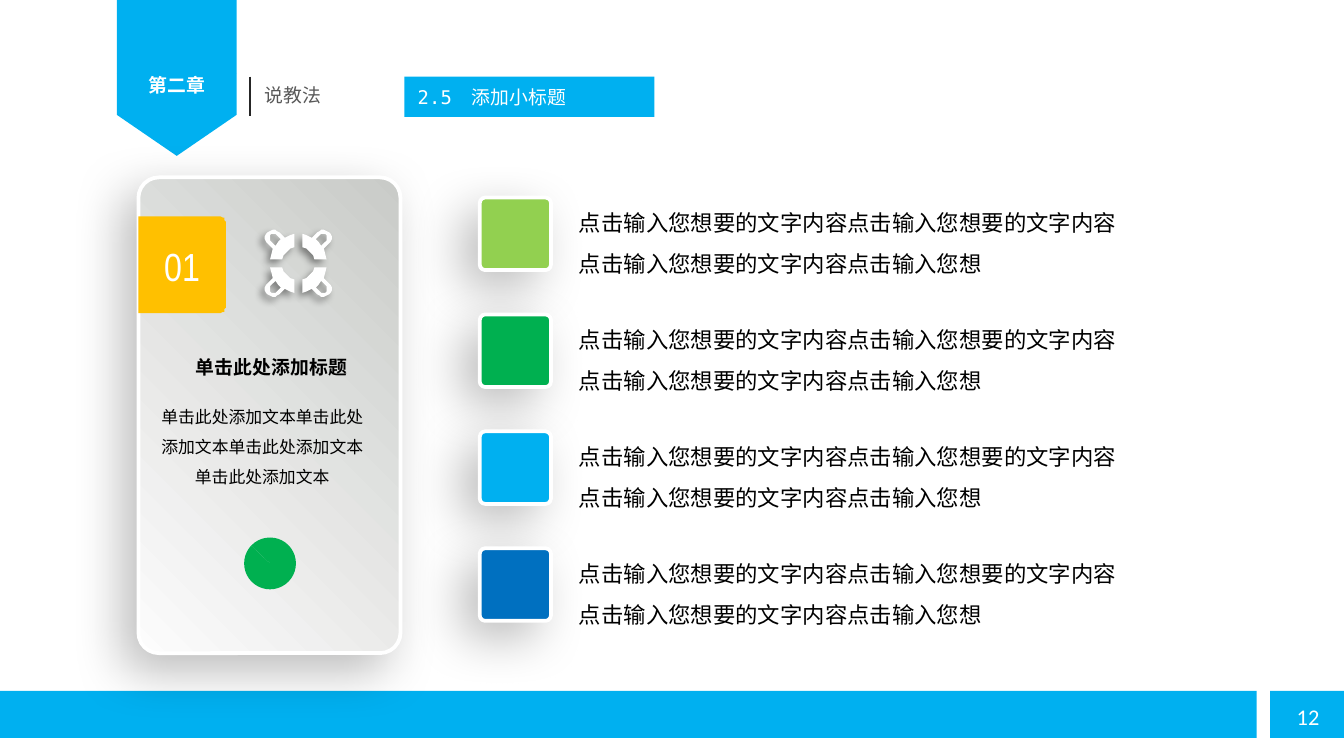
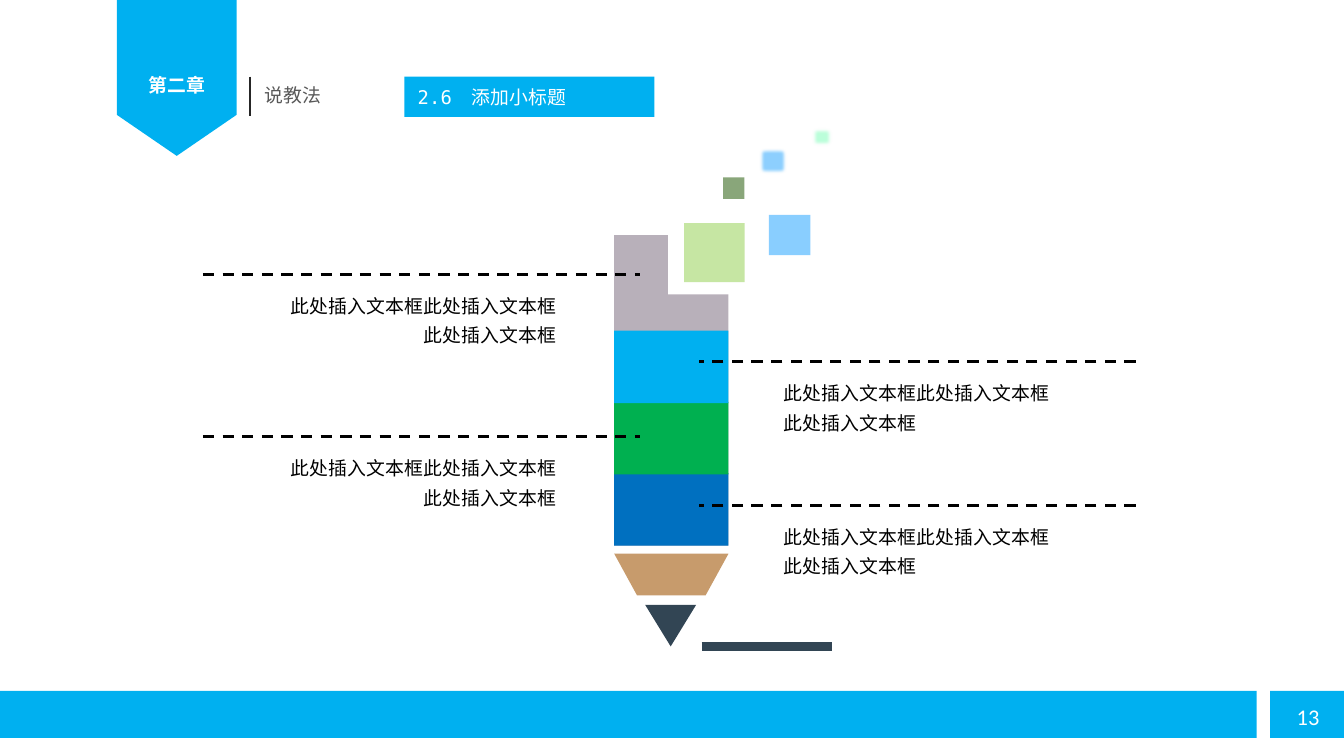
import math
from lxml import etree
from pptx import Presentation
from pptx import util as u
from pptx.chart import data
from pptx.dml import color
from pptx.enum import chart as ch
from pptx.enum import dml, shapes, text
from pptx.oxml import ns

HUES = {
    "sky": "00B0F0", "white": "FFFFFF", "black": "000000", "rule": "262626",
    "gray": "595959", "lime": "92D050", "green": "00B050", "blue": "0070C0",
    "gold": "FFC000", "dark": "C9CBC8", "pale": "FCFCFC", "lead": "324554",
    "wood": "C79B6C", "mauve": "78697B", "moss": "89A67A", "mint": "BCFFDB",
    "ice": "80CAFF",
}
SANS, BODY, MONO, THIN = "Noto Sans CJK SC", "Calibri", "DejaVu Sans Mono", "Arial Narrow"
SMALL = 10.13
SOFT = {"alpha": 26, "blur": 27, "dist": 12}
CRISP = {"alpha": 40, "blur": 4, "dist": 3}
KIND = shapes.MSO_SHAPE
ALIGN = {"l": text.PP_ALIGN.LEFT, "c": text.PP_ALIGN.CENTER, "r": text.PP_ALIGN.RIGHT}
PETAL = [
    [(19, 25), (17, 25), (16, 24), (14, 23), (10, 19), (6, 21), (3, 22), (3, 12),
     (6, 11), (8, 9), (11, 6), (12, 3), (21, 3), (20, 7), (19, 11), (23, 15),
     (24, 16), (25, 18), (25, 20), (24, 22), (23, 23), (21, 24)],
    [(18, 22), (20, 22), (21, 21), (21, 17), (17, 13), (15, 16), (13, 18),
     (16, 21), (17, 22)],
]


def rgb(hue):
    return color.RGBColor.from_string(HUES[hue])


def put(item, vals):
    for name, val in vals.items():
        setattr(item, name, val)


def node(top, tag, **vals):
    return etree.SubElement(top, ns.qn(tag), {k: str(v) for k, v in vals.items()})


def box(at):
    return [u.Inches(n) for n in at]


def paint(shape, hue, alpha=None, edge=None):
    shape.shadow.inherit = False
    shape.fill.solid()
    shape.fill.fore_color.rgb = rgb(hue)
    if alpha:
        fill = shape.element.spPr.find(ns.qn("a:solidFill"))
        node(fill[0], "a:alpha", val=alpha * 1000)
    if edge:
        shape.line.color.rgb = rgb(edge)
        shape.line.width = u.Pt(2)
    else:
        shape.line.fill.background()
    return shape


def block(slide, at, hue, kind=KIND.RECTANGLE, turn=0, **look):
    shape = slide.shapes.add_shape(kind, *box(at))
    shape.rotation = turn
    return paint(shape, hue, **look)


def effect(shape):
    return shape.element.spPr.find(ns.qn("a:effectLst"))


def shade(shape, alpha, blur, dist):
    glow = node(effect(shape), "a:outerShdw", blurRad=u.Pt(blur), dist=u.Pt(dist),
                dir=135 * 60000, algn="ctr", rotWithShape=0)
    node(node(glow, "a:srgbClr", val=HUES["black"]), "a:alpha", val=alpha * 1000)


def blur(shape, size):
    node(effect(shape), "a:softEdge", rad=u.Pt(size))


def tile(slide, at, hue):
    shape = block(slide, at, hue, KIND.ROUNDED_RECTANGLE, edge="white")
    shape.adjustments[0] = 0.078
    shade(shape, **SOFT)
    return shape


def form(slide, rings, hue, **look):
    pen = None
    for ring in rings:
        if pen is None:
            pen = slide.shapes.build_freeform(*ring[0], scale=u.Inches(0.01))
        else:
            pen.move_to(*ring[0])
        pen.add_line_segments(ring[1:], close=True)
    return paint(pen.convert_to_shape(), hue, **look)


def rule(slide, start, end, hue, width, dash=False):
    line = slide.shapes.add_connector(shapes.MSO_CONNECTOR.STRAIGHT, *box(start + end))
    line.line.color.rgb = rgb(hue)
    line.line.width = u.Pt(width)
    if dash:
        line.line.dash_style = dml.MSO_LINE.DASH
    node(line.element.spPr, "a:effectLst")


def write(para, words, size, font, hue, bold=False):
    run = para.add_run()
    run.text = words
    put(run.font, {"size": u.Pt(size), "name": font, "bold": bold})
    run.font.color.rgb = rgb(hue)
    node(run.font._element, "a:ea", typeface=SANS)


def note(slide, at, lines, size=SMALL, font=SANS, hue="black", bold=False,
         align="l", gap=None, wrap=True, pad=None):
    frame = slide.shapes.add_textbox(*box(at)).text_frame
    put(frame, {"word_wrap": wrap, "auto_size": text.MSO_AUTO_SIZE.SHAPE_TO_FIT_TEXT})
    if pad is not None:
        put(frame, {f"margin_{side}": pad for side in ("left", "top", "right", "bottom")})
    for i, words in enumerate(lines):
        para = frame.add_paragraph() if i else frame.paragraphs[0]
        put(para, {"alignment": ALIGN[align], "line_spacing": gap})
        write(para, words, size, font, hue, bold)


def label(slide, part):
    shape = block(slide, (3.01, 0.57, 1.86, 0.3), "sky")
    shape.text_frame.vertical_anchor = text.MSO_ANCHOR.MIDDLE
    para = shape.text_frame.paragraphs[0]
    para.alignment = ALIGN["l"]
    tabs = node(para._p.get_or_add_pPr(), "a:tabLst")
    node(tabs, "a:tab", pos=u.Inches(0.4), algn="l")
    write(para, part + "\t", SMALL, MONO, "white")
    write(para, "添加小标题", SMALL, BODY, "white")


def base(deck, page, part):
    slide = deck.slides.add_slide(deck.slide_layouts[6])
    block(slide, (1.01, 0.41, 0.61, 0.89), "sky", KIND.PENTAGON, 90)
    block(slide, (0.87, 0, 0.89, 0.55), "sky")
    rule(slide, (1.86, 0.57), (1.86, 0.86), "rule", 0.75)
    block(slide, (0, 5.14, 9.35, 0.35), "sky")
    block(slide, (9.45, 5.14, 0.55, 0.35), "sky")
    note(slide, (9.55, 5.18, 0.4, 0.3), [page], 12, BODY, "white", wrap=False)
    note(slide, (0.87, 0.46, 0.89, 0.26), ["第二章"], font=BODY, hue="white",
         bold=True, align="c", gap=1.5, pad=0)
    note(slide, (1.87, 0.57, 2.01, 0.27), ["说教法"], hue="gray")
    label(slide, part)
    return slide


def tab(slide):
    left, top, right, low, bend = 103, 161, 168, 233, 5
    arcs = [(right - bend + bend * math.sin(math.radians(a)),
             y - bend * math.cos(math.radians(a)))
            for y, first in ((top + bend, 0), (low - bend, 90))
            for a in range(first, first + 91, 15)]
    form(slide, [[(left, top), *arcs, (left, low)]], "gold")


def icon(slide):
    rings = [[(222 + sx * x, 196 + sy * y) for x, y in ring]
             for sx in (-1, 1) for sy in (-1, 1) for ring in PETAL]
    shade(form(slide, rings, "white"), **CRISP)


def pie(slide):
    info = data.CategoryChartData()
    info.categories = ["1", "2"]
    info.add_series("Series 1", (87, 13))
    chart = slide.shapes.add_chart(ch.XL_CHART_TYPE.PIE,
                                   *box((1.51, 3.86, 0.99, 0.66)), info).chart
    put(chart, {"has_legend": False, "has_title": False})
    put(chart.font, {"size": u.Pt(18), "name": BODY})
    chart.font.color.rgb = rgb("black")
    plot = chart.plots[0]
    plot.vary_by_categories = False
    for i in range(2):
        look = plot.series[0].points[i].format
        look.fill.solid()
        look.fill.fore_color.rgb = rgb("green")
        look.line.fill.background()
    area = chart._chartSpace.chart.plotArea
    for old in area.findall(ns.qn("c:layout")):
        area.remove(old)
    frame = etree.Element(ns.qn("c:layout"))
    area.insert(0, frame)
    hand = node(frame, "c:manualLayout")
    for tag, val in (("layoutTarget", "inner"), ("xMode", "edge"), ("yMode", "edge"),
                     ("x", 0.31), ("y", 0.21), ("w", 0.39), ("h", 0.59)):
        node(hand, "c:" + tag, val=val)


def card(slide):
    shape = tile(slide, (1.03, 1.32, 1.95, 3.54), "pale")
    shape.fill.gradient()
    shape.fill.gradient_angle = 225
    for stop, hue, spot in zip(shape.fill.gradient_stops, ("dark", "pale"), (0, 1)):
        stop.color.rgb = rgb(hue)
        stop.position = spot
    tab(slide)
    note(slide, (1.11, 1.75, 0.49, 0.45), ["01"], 21, THIN, "white", align="c")
    note(slide, (1.07, 2.6, 1.91, 0.27), ["单击此处添加标题"], bold=True, align="c")
    note(slide, (1.09, 2.9, 1.72, 0.78), ["单击此处添加文本" * 4], 9, align="c", gap=1.5)
    pie(slide)
    icon(slide)


def points(slide):
    for i, hue in enumerate(("lime", "green", "sky", "blue")):
        top = 1.47 + 0.87 * i
        tile(slide, (3.57, top, 0.53, 0.54), hue)
        note(slide, (4.21, top - 0.06, 5, 0.71),
             ["点击输入您想要的文字内容" * 2, "点击输入您想要的文字内容点击输入您想"], 12, gap=1.5)


def pencil(slide):
    block(slide, (4.8, 4.5, 0.38, 0.31), "lead", KIND.ISOSCELES_TRIANGLE, 180)
    block(slide, (4.57, 4.12, 0.85, 0.31), "wood", KIND.FLOWCHART_MANUAL_OPERATION)
    form(slide, [[(457, 175), (497, 175), (497, 219), (542, 219), (542, 406),
                  (457, 406)]], "mauve", alpha=52)
    for at, hue, alpha, soft in (
            ((5.09, 1.66, 0.45, 0.44), "lime", 52, 0),
            ((5.38, 1.32, 0.16, 0.16), "moss", None, 0),
            ((6.03, 0.94, 0.17, 0.16), "mint", None, 2),
            ((5.64, 1.09, 0.23, 0.22), "ice", 89, 2),
            ((5.72, 1.6, 0.31, 0.3), "ice", 92, 0)):
        bit = block(slide, at, hue, alpha=alpha)
        if soft:
            blur(bit, soft)
    rule(slide, (5.22, 4.81), (6.19, 4.81), "lead", 4.5)
    for i, hue in enumerate(("blue", "green", "sky")):
        block(slide, (4.57, 3.52 - 0.53 * i, 0.85, 0.54), hue)


def calls(slide):
    sides = {"r": (1.51, 4.76, 1.22), "l": (8.45, 5.2, 5.73)}
    for side, y in (("r", 2.04), ("r", 3.25), ("l", 2.69), ("l", 3.76)):
        start, end, left = sides[side]
        rule(slide, (start, y), (end, y), "black", 1.5, dash=True)
        note(slide, (left, y + 0.05, 3.02, 0.54),
             ["此处插入文本框" * 2, "此处插入文本框"], align=side, gap=1.3)


def main():
    deck = Presentation()
    wide = u.Inches(10)
    put(deck, {"slide_width": wide, "slide_height": wide * 9 // 16})
    first = base(deck, "12", "2.5")
    card(first)
    points(first)
    second = base(deck, "13", "2.6")
    pencil(second)
    calls(second)
    deck.save("out.pptx")


if __name__ == "__main__":
    main()
